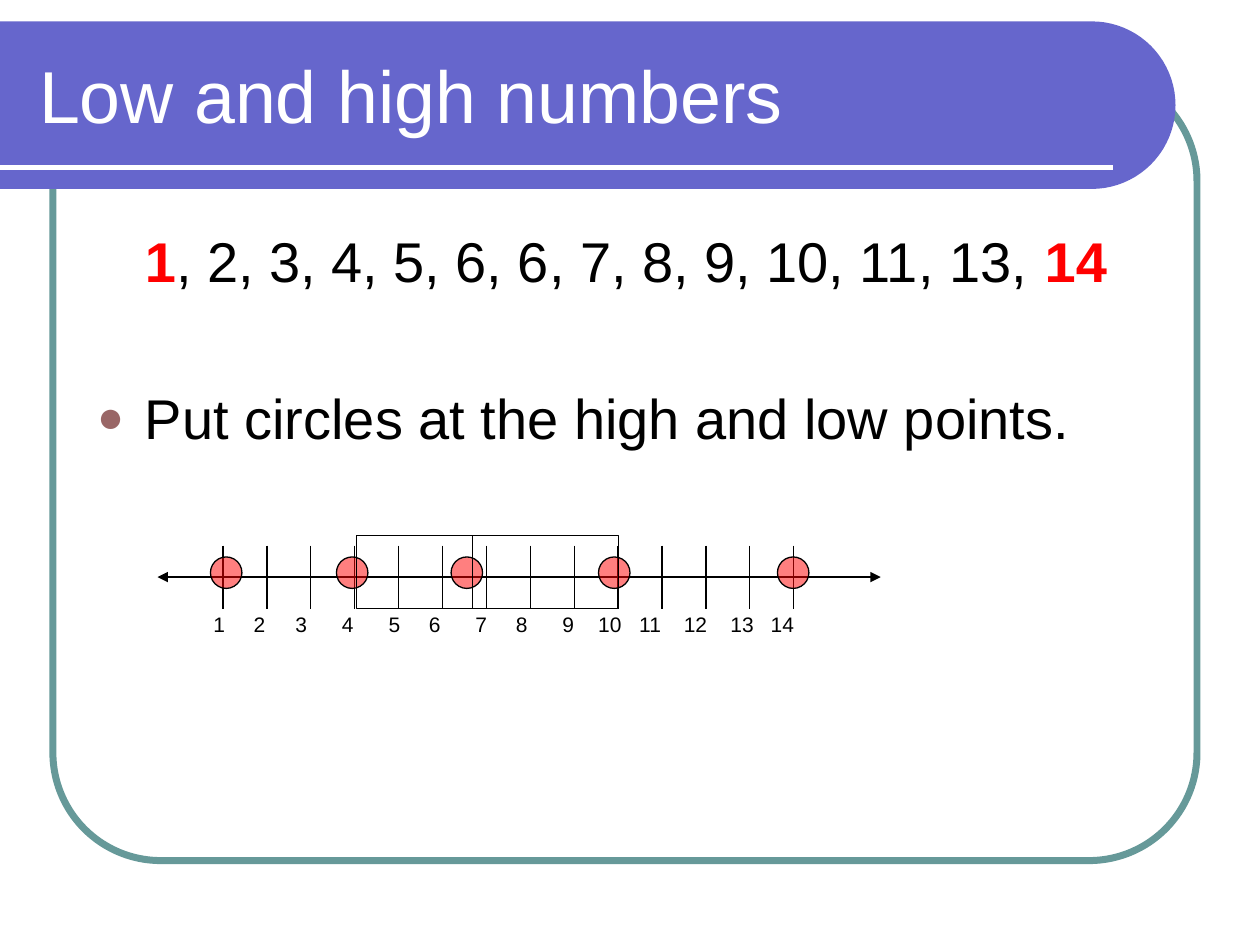
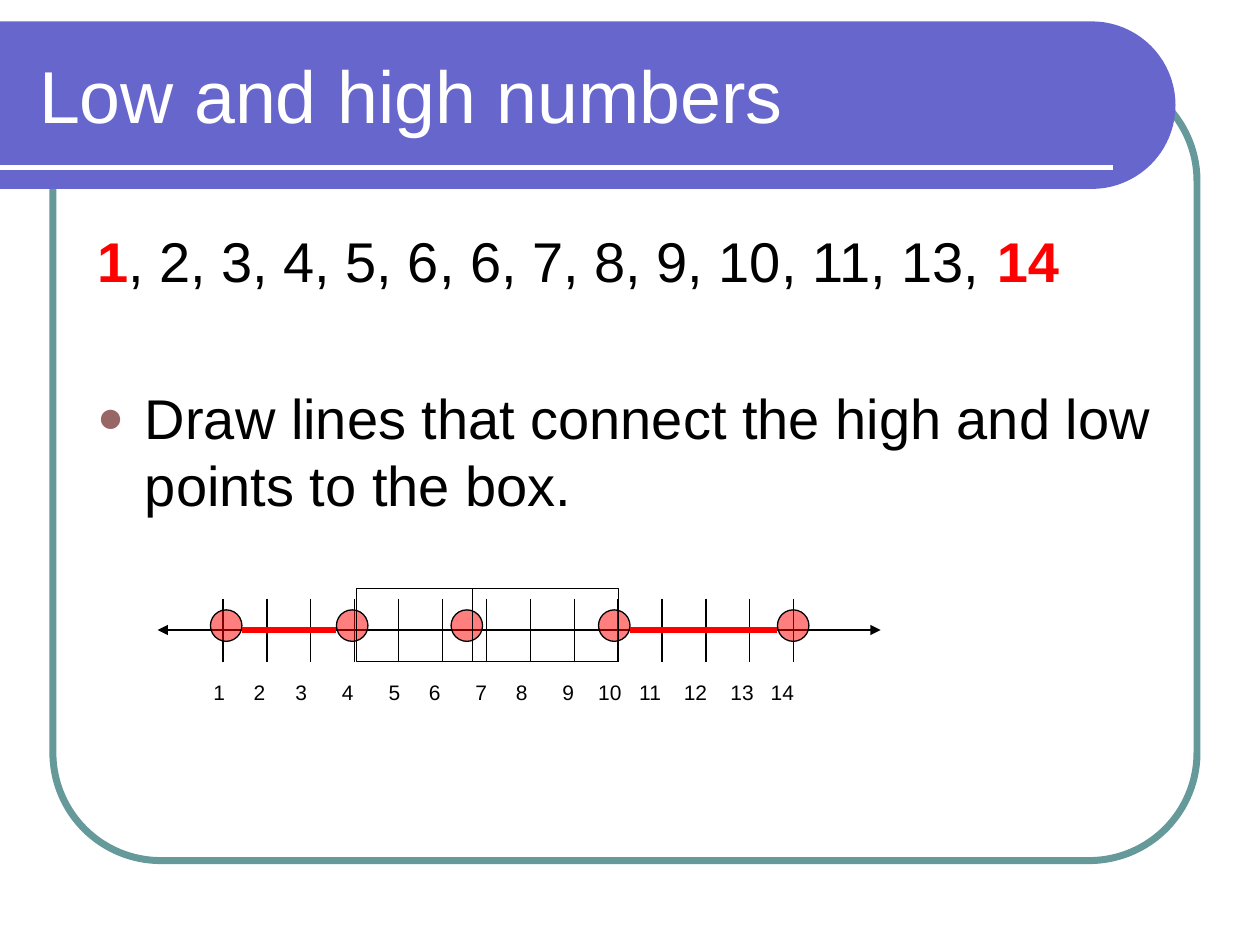
import math
from lxml import etree
from pptx import Presentation, util as u
from pptx.dml.color import RGBColor
from pptx.enum import shapes as kinds, text as txt
from pptx.oxml import ns

INK, RED, WHITE = "000000", "FF0000", "FFFFFF"
TEAL, BLUE, ROSE = "669999", "6666CC", "996666"
FONT = "Arial"
INDENT = 0.38
LABELS = [0.49, 0.81, 1.14, 1.51, 1.88, 2.2, 2.57, 2.89, 3.26, 3.59, 3.91, 4.27, 4.64, 4.96]
DOTS = [0.42, 1.42, 2.33, 3.5, 4.92]
DOT = 0.25


def color(code):
    return RGBColor.from_string(code)


def node(parent, tag, **attrs):
    return etree.SubElement(parent, ns.qn("a:" + tag), attrs)


def box(*sizes):
    return [u.Inches(n) for n in sizes]


def paint(shape, fill=None, line=None, width=0.75):
    shape.shadow.inherit = False
    if fill:
        shape.fill.solid()
        shape.fill.fore_color.rgb = color(fill)
    else:
        shape.fill.background()
    if line:
        shape.line.color.rgb = color(line)
        shape.line.width = u.Pt(width)
    else:
        shape.line.fill.background()
    return shape


def rule(slide, x1, y1, x2, y2, code=INK, width=0.75, arrow=False):
    line = slide.shapes.add_connector(kinds.MSO_CONNECTOR.STRAIGHT, *box(x1, y1, x2, y2))
    line.line.color.rgb = color(code)
    line.line.width = u.Pt(width)
    if arrow:
        node(line.line._get_or_add_ln(), "tailEnd", type="triangle")
    node(line.element.spPr, "effectLst")
    return line


def style(run, size, code=INK, bold=False):
    run.font.name = FONT
    run.font.size = u.Pt(size)
    run.font.color.rgb = color(code)
    run.font.bold = bold


def band(slide, left, top, width, height):
    rad = height / 2
    mid = left + width - rad
    turns = [math.pi * (i / 40 - 0.5) for i in range(41)]
    curve = [box(mid + rad * math.cos(t), top + rad + rad * math.sin(t)) for t in turns]
    path = slide.shapes.build_freeform(*box(left, top))
    path.add_line_segments(curve + [box(left, top + height)], close=True)
    return paint(path.convert_to_shape(), BLUE)


def frame(slide):
    panel = slide.shapes.add_shape(kinds.MSO_SHAPE.ROUNDED_RECTANGLE, *box(0.42, 0.58, 9.08, 6.25))
    panel.adjustments[0] = 0.137
    paint(panel, None, TEAL, 4)
    parts = [panel, band(slide, 0, 0.17, 9.33, 1.33), rule(slide, 0, 1.33, 8.83, 1.33, WHITE, 3)]
    first = slide.slide_layout.placeholders[0].element
    for part in parts:
        first.addprevious(part.element)


def place(shape, left, top, width, height, anchor):
    shape.left, shape.top, shape.width, shape.height = box(left, top, width, height)
    area = shape.text_frame
    area.word_wrap = True
    area.auto_size = txt.MSO_AUTO_SIZE.NONE
    area.vertical_anchor = anchor
    return area


def title(slide, words):
    area = place(slide.shapes.title, 0.21, 0.25, 8.77, 1, txt.MSO_ANCHOR.MIDDLE)
    area.text = words
    area.paragraphs[0].alignment = txt.PP_ALIGN.LEFT
    style(area.paragraphs[0].runs[0], 42, WHITE)


def body(slide, point, inset):
    area = place(slide.placeholders[1], 0.67, 1.75, 8.67, 4.83, txt.MSO_ANCHOR.TOP)
    area.margin_top = u.Inches(0.05)
    para = area.paragraphs[0]
    para.space_before = u.Pt(0)
    props = para._p.get_or_add_pPr()
    props.set("marL", str(u.Inches(inset)))
    props.set("indent", "0")
    node(props, "buNone")
    for words, code in (("1", RED), (", 2, 3, 4, 5, 6, 6, 7, 8, 9, 10, 11, 13, ", INK), ("14", RED)):
        run = para.add_run()
        run.text = words
        style(run, 32, code, code == RED)
    para = area.add_paragraph()
    para.text = point
    para.space_before = u.Pt(51)
    props = para._p.get_or_add_pPr()
    props.set("marL", str(u.Inches(INDENT)))
    props.set("indent", str(-u.Inches(INDENT)))
    node(node(props, "buClr"), "srgbClr", val=ROSE)
    node(props, "buSzPct", val="80000")
    node(props, "buFont", typeface=FONT)
    node(props, "buChar", char="●")
    style(para.runs[0], 32)


def labels(slide, left, top):
    shape = slide.shapes.add_textbox(*box(left, top, 5.5, 0.2))
    area = shape.text_frame
    area.word_wrap = True
    area.margin_left = area.margin_right = area.margin_top = area.margin_bottom = 0
    para = area.paragraphs[0]
    tabs = node(para._p.get_or_add_pPr(), "tabLst")
    for spot in LABELS:
        node(tabs, "tab", pos=str(u.Inches(spot)), algn="ctr")
    para.text = "".join(f"\t{n}" for n in range(1, len(LABELS) + 1))
    for run in para.runs:
        style(run, 12)


def plot(slide, left, top, drop, joins=()):
    axis = top + 0.33
    rule(slide, left + 0.17, axis, left + 5.57, axis)
    for i in range(14):
        x = left + 0.52 + 4.53 * i / 13
        rule(slide, x, top + 0.08, x, top + 0.58)
    rule(slide, left + 5.39, axis, left + 5.74, axis, arrow=True)
    rule(slide, left + 0.17, axis, left, axis, arrow=True)
    for x in DOTS:
        dot = slide.shapes.add_shape(kinds.MSO_SHAPE.OVAL, *box(left + x, top + 0.17, DOT, DOT))
        paint(dot, RED, INK)
        node(dot.element.spPr.find(".//" + ns.qn("a:srgbClr")), "alpha", val="50000")
    paint(slide.shapes.add_shape(kinds.MSO_SHAPE.RECTANGLE, *box(left + 1.58, top, 2.08, 0.58)), None, INK)
    rule(slide, left + 2.5, top, left + 2.5, top + 0.58)
    for low, high in joins:
        rule(slide, left + DOTS[low] + DOT, axis, left + DOTS[high], axis, RED, 3)
    labels(slide, left, top + drop)


def main():
    deck = Presentation()
    deck.slide_width, deck.slide_height = u.Inches(10), u.Inches(7.5)
    pages = [
        ("Put circles at the high and low points.", INDENT, 4.25, 0.6, ()),
        ("Draw lines that connect the high and low points to the box.", 0, 4.67, 0.72, ((3, 4), (0, 1))),
    ]
    for i, (point, inset, top, drop, joins) in enumerate(pages):
        slide = deck.slides.add_slide(deck.slide_layouts[1])
        if i == 0:
            frame(slide)
        title(slide, "Low and high numbers")
        body(slide, point, inset)
        plot(slide, 1.25, top, drop, joins)
    deck.save("out.pptx")


if __name__ == "__main__":
    main()
